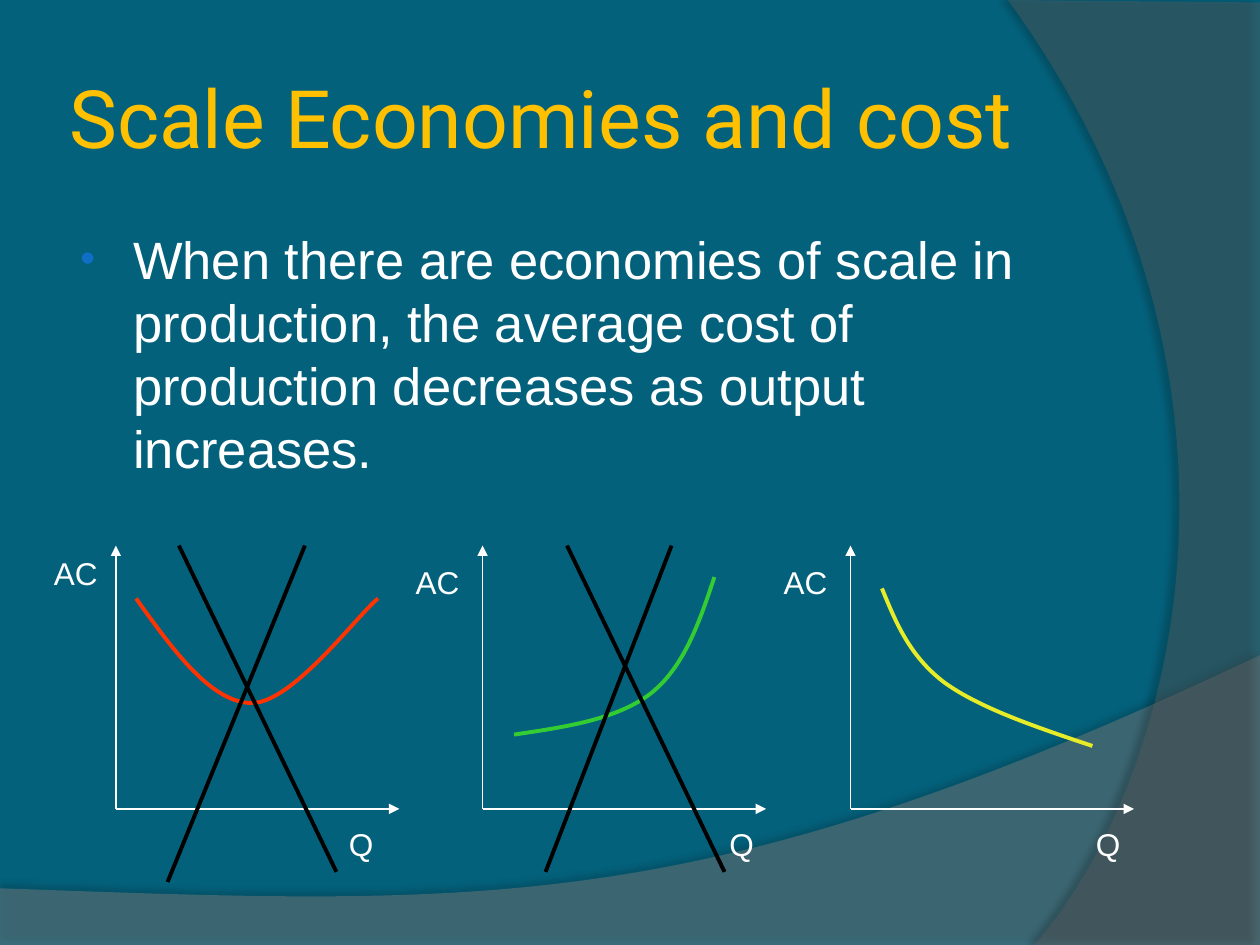
from lxml.etree import SubElement
from pptx import Presentation
from pptx.dml.color import RGBColor
from pptx.enum.shapes import MSO_CONNECTOR
from pptx.enum.text import MSO_ANCHOR, MSO_AUTO_SIZE, PP_ALIGN
from pptx.oxml import parse_xml
from pptx.oxml.ns import nsdecls, qn
from pptx.util import Inches, Pt

COLORS = {
    "background": "04617B", "title": "FFC000", "text": "FFFFFF",
    "bullet": "0F6FC6", "cross": "000000", "shadow": "000000",
    "wave": "7F7F7F", "side": "5E5E5E",
    "u_curve": "FF3300", "rising": "33CC33", "falling": "E7EC28",
}
AXIS_TOP, AXIS_BOTTOM, AXIS_LENGTH = 4.33, 6.42, 2.25

# An outline step is one point for a straight line, or two controls and an end for a curve
WAVE = [((0, 7.51),), ((10, 7.51),), ((10, 5.2),), ((5.59, 7.29), (3.91, 7.19), (0, 7.05))]
SIDE = [((10, 7.5),), ((8.21, 7.5),), ((9.35, 6.19), (10.18, 3), (8, 0)), ((10, 0.02),)]

# Each graph: axis left edge, places of its labels, curve and crossing lines
GRAPHS = [
    {"left": 0.92, "ac": (0.33, 4.35), "q": 2.67, "color": "u_curve",
     "start": (1.08, 4.75),
     "curves": [((1.38, 5.17), (1.68, 5.58), (2, 5.58)),
                ((2.32, 5.58), (2.83, 4.89), (3, 4.75))],
     "cross": [((1.42, AXIS_TOP), (2.67, 6.92)), ((2.42, AXIS_TOP), (1.33, 7))]},
    {"left": 3.83, "ac": (3.2, 4.42), "q": 5.69, "color": "rising",
     "start": (4.08, 5.83),
     "curves": [((4.49, 5.77), (4.9, 5.71), (5.17, 5.5)),
                ((5.43, 5.29), (5.55, 4.94), (5.67, 4.58))],
     "cross": [((4.5, AXIS_TOP), (5.75, 6.92)), ((5.33, AXIS_TOP), (4.33, 6.92))]},
    {"left": 6.75, "ac": (6.12, 4.42), "q": 8.6, "color": "falling",
     "start": (7, 4.67),
     "curves": [((7.11, 4.94), (7.22, 5.21), (7.5, 5.42)),
                ((7.78, 5.62), (8.22, 5.77), (8.67, 5.92))],
     "cross": []},
]


def rgb(name):
    return RGBColor.from_string(COLORS[name])


def set_all(target, values):
    for name, value in values.items():
        setattr(target, name, value)


def write(para, text, size, color, font="Arial"):
    span = para.add_run()
    span.text = text
    set_all(span.font, {"size": Pt(size), "name": font})
    span.font.color.rgb = rgb(color)


def add_outline(page, start, steps, close):
    """Build a freeform on the end points, then bend the steps that have controls."""
    builder = page.shapes.build_freeform(Inches(start[0]), Inches(start[1]), scale=1.0)
    ends = [(Inches(x), Inches(y)) for *_, (x, y) in steps]
    builder.add_line_segments(ends, close=close)
    shape = builder.convert_to_shape()
    shape.shadow.inherit = False
    segments = list(shape.element.iter(qn("a:lnTo")))
    for segment, step in zip(segments, steps):
        if len(step) == 3:
            segment.tag = qn("a:cubicBezTo")
            segment.clear()
            for x, y in step:
                SubElement(segment, qn("a:pt"), x=str(Inches(x) - shape.left),
                           y=str(Inches(y) - shape.top))
    return shape


def add_decoration(page, start, steps, color, opacity, shadow_opacity, distance, direction):
    shape = add_outline(page, start, steps, close=True)
    shape.line.fill.background()
    shape.fill.solid()
    shape.fill.fore_color.rgb = rgb(color)
    fill_color = shape.element.spPr.find(".//" + qn("a:srgbClr"))
    SubElement(fill_color, qn("a:alpha"), val=str(opacity * 1000))
    effects = shape.element.spPr.find(qn("a:effectLst"))
    effects.append(parse_xml(
        f'<a:outerShdw {nsdecls("a")} blurRad="{Pt(4)}" dist="{Pt(distance)}" '
        f'dir="{direction * 60000}" algn="ctr" rotWithShape="0">'
        f'<a:srgbClr val="{COLORS["shadow"]}"><a:alpha val="{shadow_opacity * 1000}"/>'
        f'</a:srgbClr></a:outerShdw>'))
    # The decoration belongs on the master, behind its placeholders
    master = page.slide_layout.slide_master
    master.placeholders[0].element.addprevious(shape.element)


def add_curve(page, start, curves, color):
    shape = add_outline(page, start, curves, close=False)
    shape.fill.background()
    shape.line.width = Pt(2.25)
    shape.line.color.rgb = rgb(color)


def add_line(page, start, end, color, width, arrow=False):
    places = [Inches(value) for value in (*start, *end)]
    line = page.shapes.add_connector(MSO_CONNECTOR.STRAIGHT, *places)
    line.line.width = Pt(width)
    line.line.color.rgb = rgb(color)
    properties = line.element.spPr
    if arrow:
        SubElement(properties.find(qn("a:ln")), qn("a:tailEnd"), type="triangle")
    SubElement(properties, qn("a:effectLst"))


def add_label(page, text, left, top, width):
    box = page.shapes.add_textbox(Inches(left), Inches(top), Inches(width), Inches(0.4))
    set_all(box.text_frame, {"word_wrap": False,
                             "auto_size": MSO_AUTO_SIZE.SHAPE_TO_FIT_TEXT})
    write(box.text_frame.paragraphs[0], text, 18, "text")


def add_title(page, text):
    title = page.shapes.title
    set_all(title, {"left": Inches(0.5), "top": Inches(0.3),
                    "width": Inches(8.17), "height": Inches(1.25)})
    margins = {f"margin_{side}": Inches(0.05) for side in ("left", "right", "top", "bottom")}
    set_all(title.text_frame, {"vertical_anchor": MSO_ANCHOR.MIDDLE, "word_wrap": True,
                               "auto_size": MSO_AUTO_SIZE.NONE, **margins})
    para = title.text_frame.paragraphs[0]
    para.alignment = PP_ALIGN.LEFT
    write(para, text, 46, "title", "Roboto")


def add_bullet_text(page, text):
    box = page.shapes.add_textbox(Inches(0.5), Inches(1.75), Inches(8.17), Inches(4.95))
    box.text_frame.word_wrap = True
    para = box.text_frame.paragraphs[0]
    para.space_before = Pt(6)
    write(para, text, 30, "text")
    properties = para._p.get_or_add_pPr()
    properties.set("marL", str(Inches(0.46)))
    properties.set("indent", str(Inches(-0.42)))
    bullet_color = SubElement(properties, qn("a:buClr"))
    SubElement(bullet_color, qn("a:srgbClr"), val=COLORS["bullet"])
    SubElement(properties, qn("a:buSzPct"), val="80000")
    SubElement(properties, qn("a:buFont"), typeface="Arial")
    SubElement(properties, qn("a:buChar"), char="•")


def add_graph(page, graph):
    origin = (graph["left"], AXIS_BOTTOM)
    for end in ((graph["left"], AXIS_TOP), (graph["left"] + AXIS_LENGTH, AXIS_BOTTOM)):
        add_line(page, origin, end, "text", 0.75, arrow=True)
    add_curve(page, graph["start"], graph["curves"], graph["color"])
    add_label(page, "Q", graph["q"], 6.5, 0.4)
    add_label(page, "AC", *graph["ac"], 0.55)
    for start, end in graph["cross"]:
        add_line(page, start, end, "cross", 2.25)


def main():
    deck = Presentation()
    set_all(deck, {"slide_width": Inches(10), "slide_height": Inches(7.5)})
    page = deck.slides.add_slide(deck.slide_layouts[5])
    page.background.fill.solid()
    page.background.fill.fore_color.rgb = rgb("background")

    add_decoration(page, (0, 7.05), WAVE, "wave", 45, 35, 3.5, 270)
    add_decoration(page, (10, 0.02), SIDE, "side", 40, 45, 4, 180)
    add_title(page, "Scale Economies and cost")
    add_bullet_text(page, "When there are economies of scale in production, the average "
                          "cost of production decreases as output increases.")
    for graph in GRAPHS:
        add_graph(page, graph)
    deck.save("out.pptx")


if __name__ == "__main__":
    main()
